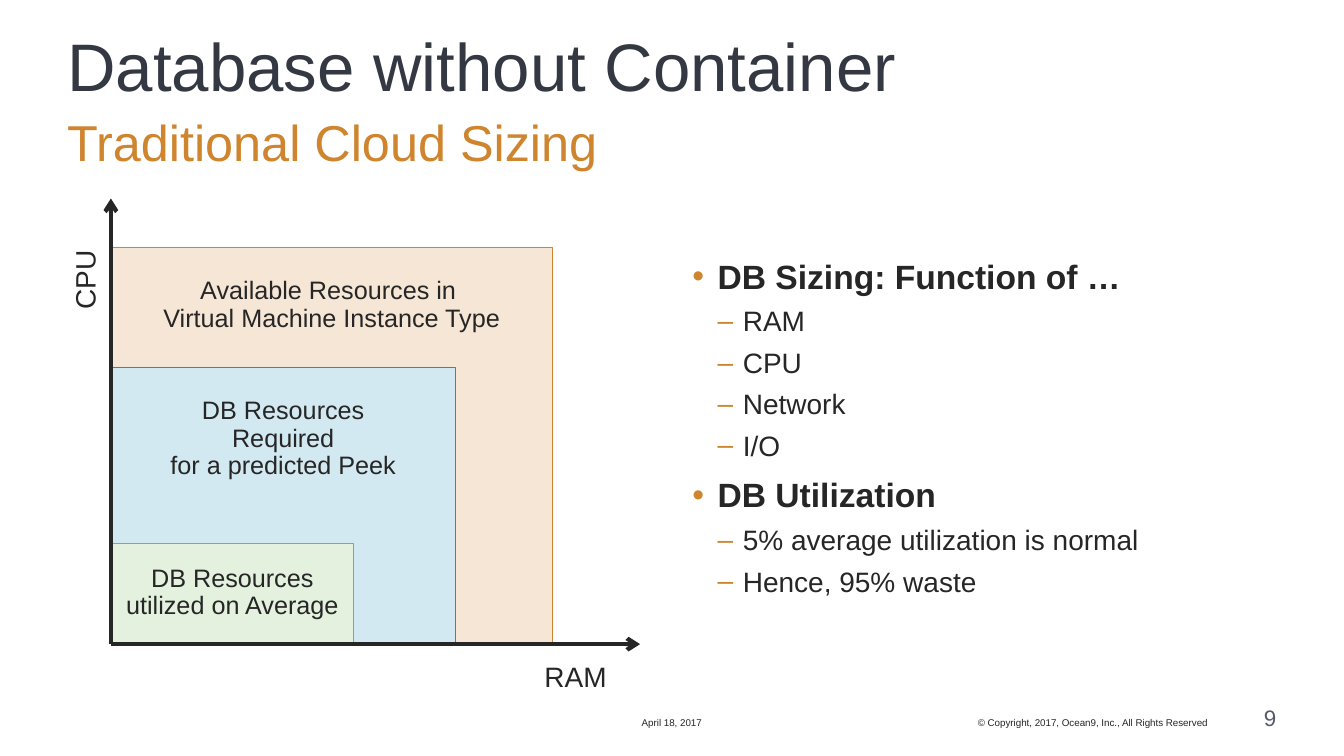
"""Build the slide on sizing a database without containers."""
from dataclasses import dataclass

from lxml import etree
from pptx import Presentation
from pptx.dml.color import RGBColor
from pptx.enum.shapes import MSO_CONNECTOR, MSO_SHAPE
from pptx.enum.text import MSO_ANCHOR, MSO_AUTO_SIZE, PP_ALIGN
from pptx.oxml.ns import qn
from pptx.util import Pt

LEFT, MID, RIGHT = PP_ALIGN.LEFT, PP_ALIGN.CENTER, PP_ALIGN.RIGHT
TOP, CENTER, LOW = MSO_ANCHOR.TOP, MSO_ANCHOR.MIDDLE, MSO_ANCHOR.BOTTOM
RECT, LINE = MSO_SHAPE.RECTANGLE, MSO_CONNECTOR.STRAIGHT
FIXED = MSO_AUTO_SIZE.NONE

INK = RGBColor(0x26, 0x26, 0x26)
NAVY = RGBColor(0x34, 0x38, 0x42)
SLATE = RGBColor(0x55, 0x5B, 0x6B)
AMBER = RGBColor(0xCF, 0x84, 0x2E)
SAND = RGBColor(0xF6, 0xE6, 0xD5)
TEAL = RGBColor(0x34, 0x8A, 0xA7)
SKY = RGBColor(0xD3, 0xE9, 0xF1)
LEAF = RGBColor(0x71, 0xBA, 0x5B)
MINT = RGBColor(0xE3, 0xF1, 0xDE)

AXIS_X, AXIS_Y = 79.2, 460.1


@dataclass(frozen=True)
class Zone:
    text: str
    top: float
    width: float
    height: float
    fill: RGBColor
    edge: RGBColor
    inset: float
    anchor: MSO_ANCHOR


@dataclass(frozen=True)
class Label:
    text: str
    box: tuple[float, float, float, float]
    size: float
    color: RGBColor = INK
    align: PP_ALIGN = LEFT
    anchor: MSO_ANCHOR = TOP
    space: float = 0.9
    turn: float = 0


@dataclass(frozen=True)
class Topic:
    head: str
    items: tuple[str, ...]


ZONES = (
    Zone("Available Resources in \vVirtual Machine Instance Type",
         176.4, 315.4, 282.2, SAND, AMBER, 22.2, TOP),
    Zone("DB Resources\nRequired\nfor a predicted Peek",
         262.1, 246.2, 198, SKY, TEAL, 22.2, TOP),
    Zone("DB Resources utilized on Average",
         388.1, 173.5, 70.6, MINT, LEAF, 3.6, CENTER),
)
LABELS = (
    Label("Traditional Cloud Sizing", (48, 84.2, 864, 41.8), 36, AMBER),
    Label("CPU", (25.9, 186.5, 72, 27.4), 20, align=MID, anchor=CENTER,
          turn=270),
    Label("RAM", (375.1, 470.2, 72, 28.1), 20, align=MID, anchor=CENTER),
    Label("April 18, 2017", (440.6, 504, 78.5, 16.6), 7, align=MID,
          anchor=LOW, space=1),
    Label("© Copyright, 2017, Ocean9, Inc., All Rights Reserved",
          (545.8, 504, 316.8, 16.6), 7, align=RIGHT, anchor=LOW, space=1),
    Label("9", (869.8, 504, 41.8, 18), 16, SLATE, RIGHT, LOW, 1),
)
TOPICS = (
    Topic("DB Sizing: Function of …", ("RAM", "CPU", "Network", "I/O")),
    Topic("DB Utilization",
          ("5% average utilization is normal", "Hence, 95% waste")),
)


def place(shape, left: float, top: float, width: float, height: float) -> None:
    shape.left, shape.top = Pt(left), Pt(top)
    shape.width, shape.height = Pt(width), Pt(height)


def setup(frame, anchor: MSO_ANCHOR = TOP, side: float = 0,
          top: float = 0, base: float = 0) -> None:
    frame.word_wrap = True
    frame.auto_size = FIXED
    frame.vertical_anchor = anchor
    frame.margin_left = frame.margin_right = Pt(side)
    frame.margin_top, frame.margin_bottom = Pt(top), Pt(base)


def write(para, text: str, *, size: float, color: RGBColor = INK,
          bold: bool = False, align: PP_ALIGN = LEFT, space: float = 0.9,
          before: float = 0) -> None:
    para.text = text
    para.alignment = align
    para.line_spacing = space
    para.space_before = Pt(before)
    for run in para.runs:
        font = run.font
        font.name, font.size, font.bold = "Arial", Pt(size), bold
        font.color.rgb = color


def bullet(para, mark: str, level: int) -> None:
    para.level = level
    props = para._p.get_or_add_pPr()
    props.set("marL", str(Pt(18 * (level + 1))))
    props.set("indent", str(Pt(-18)))
    tint = etree.SubElement(props, qn("a:buClr"))
    etree.SubElement(tint, qn("a:srgbClr"), val=str(AMBER))
    etree.SubElement(props, qn("a:buFont"), typeface="Arial")
    etree.SubElement(props, qn("a:buChar"), char=mark)


def add_zone(shapes, zone: Zone) -> None:
    box = shapes.add_shape(RECT, Pt(AXIS_X), Pt(zone.top),
                           Pt(zone.width), Pt(zone.height))
    box.shadow.inherit = False
    box.fill.solid()
    box.fill.fore_color.rgb = zone.fill
    box.line.color.rgb = zone.edge
    box.line.width = Pt(0.5)
    frame = box.text_frame
    setup(frame, zone.anchor, 7.2, zone.inset, 3.6)
    for num, text in enumerate(zone.text.split("\n")):
        para = frame.add_paragraph() if num else frame.paragraphs[0]
        write(para, text, size=18, align=MID)


def add_label(shapes, label: Label) -> None:
    box = shapes.add_textbox(*map(Pt, label.box))
    box.rotation = label.turn
    setup(box.text_frame, label.anchor)
    write(box.text_frame.paragraphs[0], label.text, size=label.size,
          color=label.color, align=label.align, space=label.space)


def add_list(shapes) -> None:
    frame = shapes.add_textbox(Pt(494.6), Pt(185.8),
                               Pt(417.6), Pt(342)).text_frame
    setup(frame)
    for num, topic in enumerate(TOPICS):
        para = frame.add_paragraph() if num else frame.paragraphs[0]
        bullet(para, "•", 0)
        write(para, topic.head, size=24, bold=True, before=12 if num else 0)
        for item in topic.items:
            para = frame.add_paragraph()
            bullet(para, "–", 1)
            write(para, item, size=20, before=8)


def add_axis(shapes, right: float, top: float) -> None:
    axis = shapes.add_connector(LINE, Pt(AXIS_X), Pt(AXIS_Y),
                                Pt(right), Pt(top))
    axis.line.color.rgb = INK
    axis.line.width = Pt(3)
    etree.SubElement(axis.line._get_or_add_ln(), qn("a:tailEnd"), type="arrow")
    etree.SubElement(axis._element.spPr, qn("a:effectLst"))


def main() -> None:
    deck = Presentation()
    deck.slide_width, deck.slide_height = Pt(960), Pt(540)
    shapes = deck.slides.add_slide(deck.slide_layouts[5]).shapes
    title = shapes.title
    place(title, 48, 24, 864, 54)
    setup(title.text_frame)
    write(title.text_frame.paragraphs[0], "Database without Container",
          size=48, color=NAVY)
    for zone in ZONES:
        add_zone(shapes, zone)
    for label in LABELS:
        add_label(shapes, label)
    add_list(shapes)
    add_axis(shapes, AXIS_X, 141.8)
    add_axis(shapes, 457.2, AXIS_Y)
    deck.save("out.pptx")


if __name__ == "__main__":
    main()
